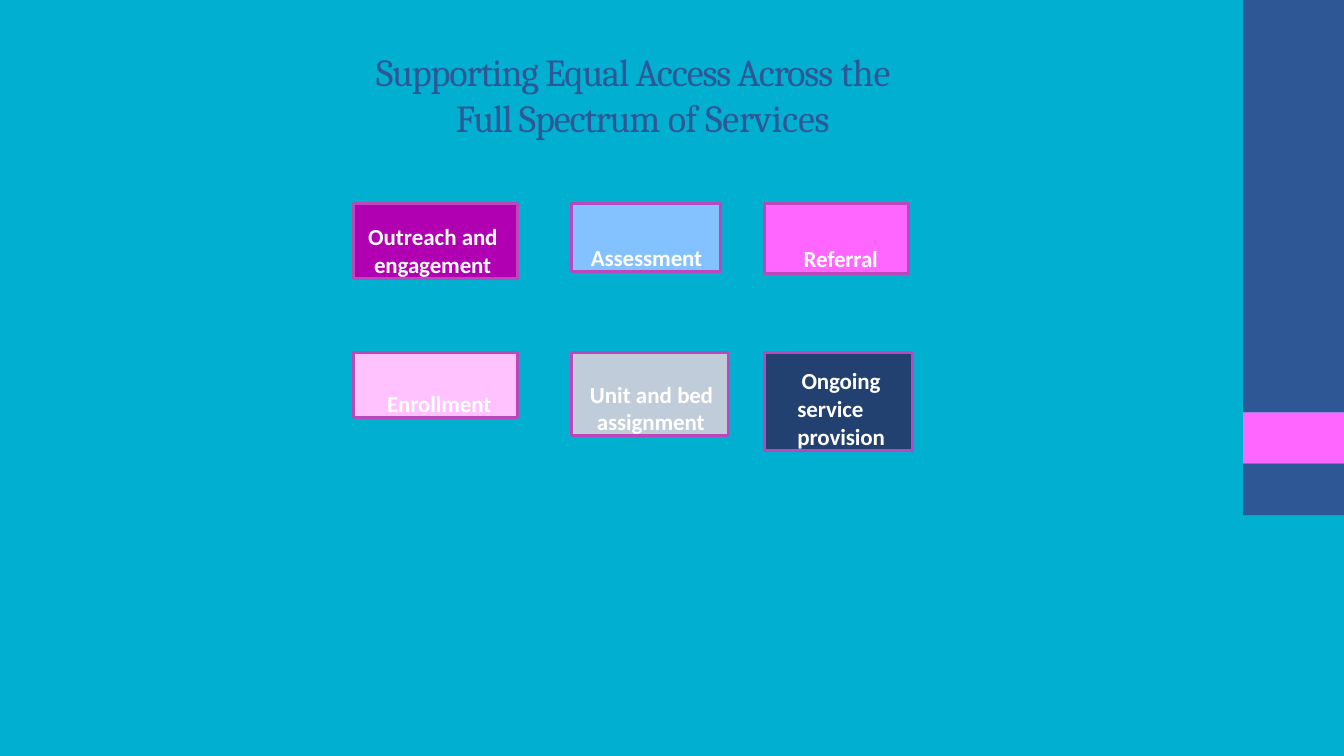
from pptx import Presentation
from pptx.dml.color import RGBColor
from pptx.enum.shapes import MSO_SHAPE
from pptx.enum.text import MSO_ANCHOR, MSO_AUTO_SIZE, PP_ALIGN
from pptx.util import Inches, Pt

RECTANGLE = MSO_SHAPE.RECTANGLE
TOP = MSO_ANCHOR.TOP
NO_AUTOFIT = MSO_AUTO_SIZE.NONE
LEFT = PP_ALIGN.LEFT
TITLE_ONLY = 5

COLORS = {
    "background": "01AFD1",
    "blue": "2E5796",
    "pink": "FF66FF",
    "border": "BB48BB",
    "purple": "B100B1",
    "sky": "84C1FF",
    "blush": "FFC2FF",
    "gray": "C0CCD9",
    "navy": "224170",
    "white": "FFFFFF",
}

TITLE = [("Supporting Equal Access Across ", -0.8), ("the ", -0.2),
         ("Full Spectrum ", -0.8), ("of ", -0.4), ("Services", -0.1)]

COLUMNS = (3.51, 5.67, 7.58)
ROWS = (2.02, 3.5)

# Row by row: fill, width, height, top inset, left margin, first-line indent, spans
STAGES = [
    ("purple", 1.62, 0.74, 0.19, 0.2, -0.06,
     [("Outreach ", 0), ("and ", -0.2), ("engagement", -0.1)]),
    ("sky", 1.48, 0.67, 0.4, 0.19, 0, [("Assessment", -0.1)]),
    ("pink", 1.43, 0.69, 0.41, 0.39, 0, [("Referral", -0.1)]),
    ("blush", 1.62, 0.64, 0.36, 0.33, 0, [("Enrollment", -0.1)]),
    ("gray", 1.55, 0.82, 0.27, 0.25, -0.07,
     [("Unit and ", 0), ("bed ", -0.2), ("assignment", -0.1)]),
    ("navy", 1.47, 0.97, 0.14, 0.33, 0.04,
     [("Ongoing service provision", -0.1)]),
]


def color(name):
    return RGBColor.from_string(COLORS[name])


class PageBuilder:
    title_font = ("Cambria", 27.3, False, "blue")
    label_font = ("Calibri", 16.4, True, "white")

    def __init__(self, deck):
        self.page = deck.slides.add_slide(deck.slide_layouts[TITLE_ONLY])
        fill = self.page.background.fill
        fill.solid()
        fill.fore_color.rgb = color("background")

    def set_text(self, shape, spans, font_style, top_inset, margin, indent):
        """Fill a shape with one paragraph of (text, letter spacing) spans."""
        frame = shape.text_frame
        frame.word_wrap = True
        frame.auto_size = NO_AUTOFIT
        frame.vertical_anchor = TOP
        frame.margin_left = frame.margin_right = frame.margin_bottom = 0
        frame.margin_top = Inches(top_inset)
        para = frame.paragraphs[0]
        para.alignment = LEFT
        name, size, bold, font_color = font_style
        para.font.name = name
        para.font.size = Pt(size)
        para.font.bold = bold
        para.font.color.rgb = color(font_color)
        properties = para._p.get_or_add_pPr()
        properties.set("marL", str(Inches(margin)))
        properties.set("indent", str(Inches(indent)))
        for text, spacing in spans:
            span = para.add_run()
            span.text = text
            span._r.get_or_add_rPr().set("spc", str(round(spacing * 100)))

    def title(self, spans, left, top, width, height):
        box = self.page.shapes.title
        box.left, box.top = Inches(left), Inches(top)
        box.width, box.height = Inches(width), Inches(height)
        self.set_text(box, spans, self.title_font, 0.01, 0.8, -0.79)

    def rectangle(self, fill, left, top, width, height):
        box = self.page.shapes.add_shape(
            RECTANGLE, Inches(left), Inches(top), Inches(width), Inches(height))
        box.shadow.inherit = False
        box.fill.solid()
        box.fill.fore_color.rgb = color(fill)
        box.line.fill.background()
        return box

    def stage(self, left, top, fill, width, height, inset, margin, indent, spans):
        box = self.rectangle(fill, left, top, width, height)
        box.line.color.rgb = color("border")
        box.line.width = Pt(2.04)
        self.set_text(box, spans, self.label_font, inset, margin, indent)


def main():
    deck = Presentation()
    deck.slide_width, deck.slide_height = Inches(13.33), Inches(7.5)
    builder = PageBuilder(deck)

    for fill, top, height in [("blue", 0, 4.09), ("pink", 4.09, 0.51),
                              ("blue", 4.6, 0.51)]:
        builder.rectangle(fill, 12.33, top, 1, height)

    builder.title(TITLE, 3.72, 0.47, 5.44, 0.94)
    for index, stage in enumerate(STAGES):
        row, column = divmod(index, len(COLUMNS))
        builder.stage(COLUMNS[column], ROWS[row], *stage)

    deck.save("out.pptx")


if __name__ == "__main__":
    main()
